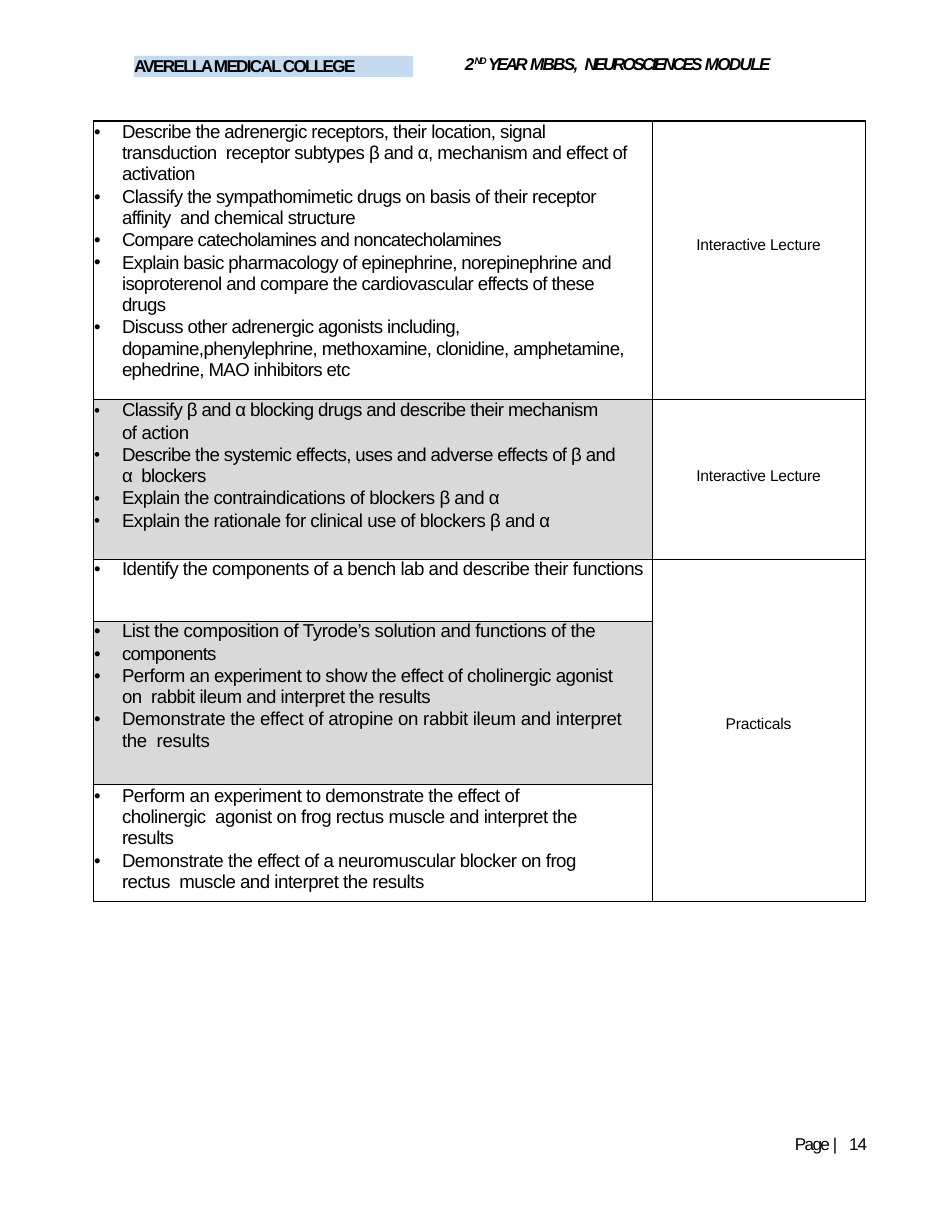
from pptx import Presentation
from pptx.dml.color import RGBColor
from pptx.enum.shapes import MSO_SHAPE as Shape
from pptx.enum.text import MSO_ANCHOR as Anchor, PP_ALIGN as Align
from pptx.oxml.ns import qn
from pptx.util import Emu, Pt
from lxml.etree import SubElement

PX_PER_INCH = 112
BLACK, GREY, BLUE = "000000", "D9D9D9", "C5D9EF"

# Each objective: text, letter spacing, line spacing (a factor or points), space before
ADRENERGIC = [
    ("Describe the adrenergic receptors, their location, signal transduction  receptor "
     "subtypes β and α, mechanism and effect of activation", -0.36, 1.02, 0.4),
    ("Classify the sympathomimetic drugs on basis of their receptor affinity  and "
     "chemical structure", -0.36, 1.02, 0.6),
    ("Compare catecholamines and noncatecholamines", -0.5, 1.0, 0.8),
    ("Explain basic pharmacology of epinephrine, norepinephrine and  isoproterenol and "
     "compare the cardiovascular effects of these drugs", -0.4, 1.02, 0.7),
    ("Discuss other adrenergic agonists including,  dopamine,phenylephrine, methoxamine, "
     "clonidine, amphetamine,  ephedrine, MAO inhibitors etc", -0.4, 1.02, 0.6),
]
BLOCKERS = [
    ("Classify β and α blocking drugs and describe their mechanism", -0.4, Pt(14.1), 0),
    ("of action", -0.25, 1.0, 0.8),
    ("Describe the systemic effects, uses and adverse effects of β and α  blockers",
     -0.4, 1.01, 0.9),
    ("Explain the contraindications of blockers β and α", -0.3, Pt(14.3), 0.1),
    ("Explain the rationale for clinical use of blockers β and α", -0.3, Pt(14.3), 0),
]
RECORDING_LAB = [
    ("Identify the components of a bench lab and describe their functions", -0.3, 1.0, 0.2),
]
RABBIT_ILEUM = [
    ("List the composition of Tyrode’s solution and functions of the", -0.26, 1.0, 0.2),
    ("components", -0.5, 1.0, 1),
    ("Perform an experiment to show the effect of cholinergic agonist on  rabbit ileum "
     "and interpret the results", -0.3, 1.02, 0.6),
    ("Demonstrate the effect of atropine on rabbit ileum and interpret the  results",
     -0.2, 1.02, 0.5),
]
FROG_RECTUS = [
    ("Perform an experiment to demonstrate the effect of cholinergic  agonist on frog "
     "rectus muscle and interpret the results", -0.3, 1.02, 0),
    ("Demonstrate the effect of a neuromuscular blocker on frog rectus  muscle and "
     "interpret the results", -0.32, 1.02, 0.7),
]
# Each row: objectives, height, right indent, bullet size in percent, fill
ROWS = [
    (ADRENERGIC, 277, 21, 100, None),
    (BLOCKERS, 160, 30, 92, GREY),
    (RECORDING_LAB, 62, 0, 100, None),
    (RABBIT_ILEUM, 164, 21, 100, GREY),
    (FROG_RECTUS, 117, 60, 100, None),
]
# Each teaching method: first row, last row, label, distance from the cell's top
METHODS = [
    (0, 0, "Interactive Lecture", 115),
    (1, 1, "Interactive Lecture", 69),
    (2, 4, "Practicals", 157),
]


def px(length):
    return Emu(round(length * 914400 / PX_PER_INCH))


def color(hex_string):
    return RGBColor.from_string(hex_string)


def add_text(paragraph, text, size=11, spacing=0, bold=False, italic=False, raised=0):
    run = paragraph.add_run()
    run.text = text
    font = run.font
    font.name, font.size, font.bold, font.italic = "Arial", Pt(size), bold, italic
    font.color.rgb = color(BLACK)
    properties = run._r.get_or_add_rPr()
    properties.set("spc", str(round(spacing * 100)))
    if raised:
        properties.set("baseline", str(raised * 1000))


def clear_margins(holder, top=0):
    holder.margin_left = holder.margin_right = holder.margin_bottom = 0
    holder.margin_top = px(top)


def prepare_frame(shape, top=0):
    frame = shape.text_frame
    clear_margins(frame, top)
    frame.word_wrap = True
    frame.vertical_anchor = Anchor.TOP
    return frame.paragraphs[0]


def add_header(slide):
    # College name on a blue band
    band = slide.shapes.add_shape(Shape.RECTANGLE, px(134), px(56), px(279), px(21))
    band.shadow.inherit = False
    band.fill.solid()
    band.fill.fore_color.rgb = color(BLUE)
    band.line.fill.background()
    college = prepare_frame(band)
    college.alignment = Align.LEFT
    college.line_spacing = Pt(12.9)
    add_text(college, "AVERELLA MEDICAL COLLEGE", spacing=-1.1, bold=True)

    # Module title
    title_box = slide.shapes.add_textbox(px(465), px(52), px(395), px(22))
    title = prepare_frame(title_box, top=1)
    title.space_before = Pt(1)
    for text, size, spacing, raised in [
        ("2", 11, -0.6, 0), ("ND ", 10.5, -0.9, 32), ("YEAR ", 11, -1.7, 0),
        ("MBBS,  ", 11, -1.1, 0), ("NEUROSCIENCES ", 11, -1.7, 0), ("MODULE", 11, -1.1, 0),
    ]:
        add_text(title, text, size=size, spacing=spacing, raised=raised,
                 bold=True, italic=True)


def add_footer(slide):
    page_box = slide.shapes.add_textbox(px(795), px(1136), px(90), px(20))
    page = prepare_frame(page_box)
    page.line_spacing = Pt(11.5)
    for text, spacing in [("Page ", -1.1), ("| ", 2.2), ("14", -0.6)]:
        add_text(page, text, spacing=spacing)


def style_cell(cell, top_line=0.5, fill=None):
    clear_margins(cell)
    cell.vertical_anchor = Anchor.TOP
    properties = cell._tc.get_or_add_tcPr()
    for side in "LRTB":
        width = Pt(top_line if side == "T" else 0.5)
        line = SubElement(properties, qn(f"a:ln{side}"), w=str(width))
        solid = SubElement(line, qn("a:solidFill"))
        SubElement(solid, qn("a:srgbClr"), val=BLACK)
    if fill:
        cell.fill.solid()
        cell.fill.fore_color.rgb = color(fill)
    else:
        cell.fill.background()


def write_objectives(cell, objectives, right_indent, bullet_size):
    frame = cell.text_frame
    for index, (text, spacing, line_spacing, before) in enumerate(objectives):
        objective = frame.add_paragraph() if index else frame.paragraphs[0]
        objective.line_spacing = line_spacing
        objective.space_before = Pt(before)
        properties = objective._p.get_or_add_pPr()
        properties.set("marL", str(px(29)))
        properties.set("marR", str(px(right_indent)))
        if text == "of action":  # continues the objective above
            properties.set("indent", "0")
            SubElement(properties, qn("a:buNone"))
        else:
            properties.set("indent", str(px(-28)))
            SubElement(properties, qn("a:buSzPct"), val=str(bullet_size * 1000))
            SubElement(properties, qn("a:buFont"), typeface="Arial")
            SubElement(properties, qn("a:buChar"), char="•")
        add_text(objective, text, size=12, spacing=spacing)


def add_objectives_table(slide):
    widths = (559, 213)
    height = sum(row[1] for row in ROWS)
    table = slide.shapes.add_table(len(ROWS), len(widths), px(93), px(121),
                                   px(sum(widths)), px(height)).table
    table.first_row = table.horz_banding = False
    for column, width in zip(table.columns, widths):
        column.width = px(width)

    # Objectives
    for index, (objectives, row_height, indent, bullet_size, fill) in enumerate(ROWS):
        table.rows[index].height = px(row_height)
        top_line = 0.5 if index else 1.5
        style_cell(table.cell(index, 0), top_line, fill)
        style_cell(table.cell(index, 1), top_line)
        write_objectives(table.cell(index, 0), objectives, indent, bullet_size)

    # Teaching methods
    for first, last, label, offset in METHODS:
        cell = table.cell(first, 1)
        if last > first:
            cell.merge(table.cell(last, 1))
        cell.margin_top = px(offset)
        method = cell.text_frame.paragraphs[0]
        method.alignment = Align.CENTER
        add_text(method, label, size=10, spacing=-0.1)


def main():
    deck = Presentation()
    deck.slide_width, deck.slide_height = px(952), px(1232)
    slide = deck.slides.add_slide(deck.slide_layouts[6])
    add_footer(slide)
    add_header(slide)
    add_objectives_table(slide)
    deck.save("out.pptx")


if __name__ == "__main__":
    main()
